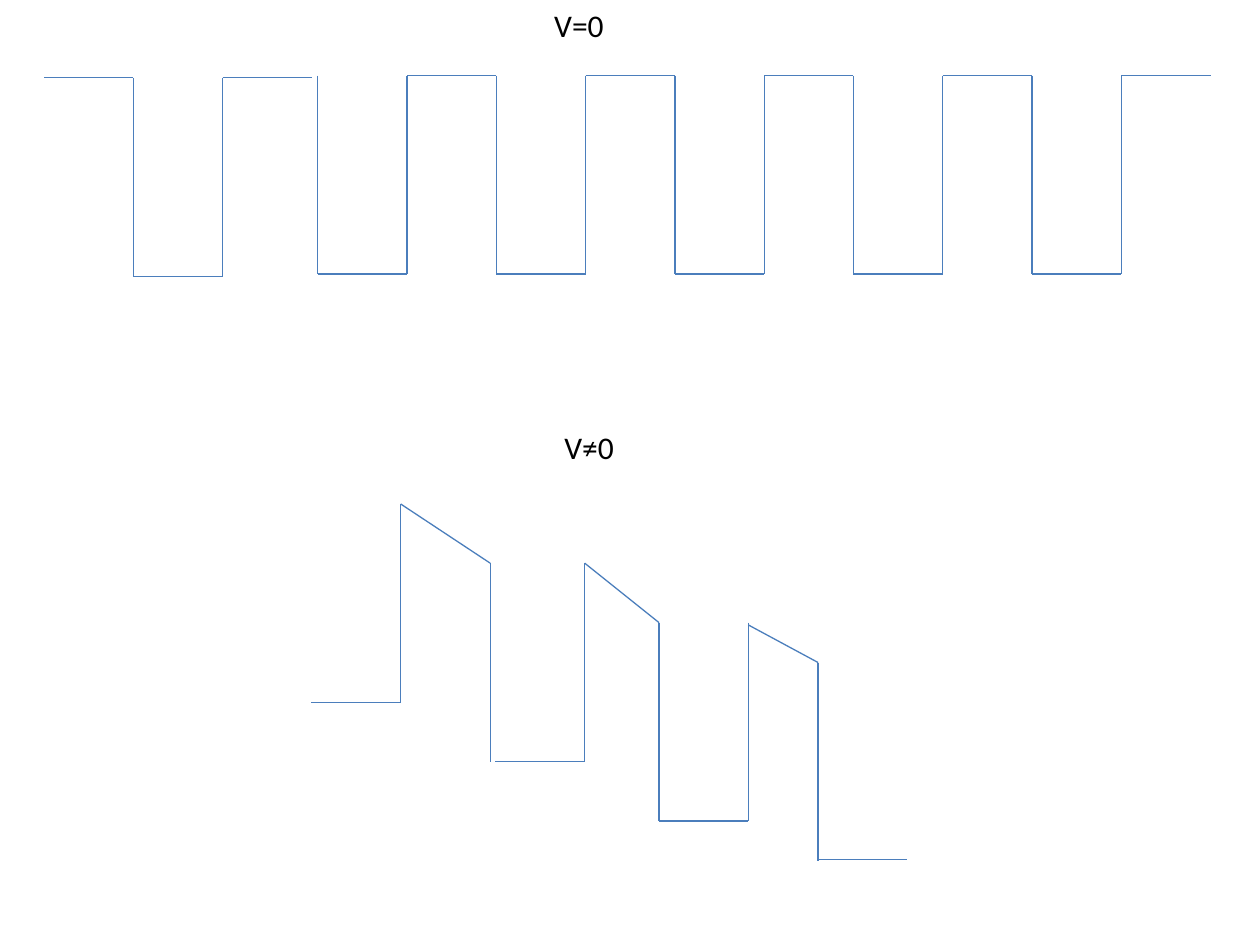
from pptx import Presentation
from pptx.dml.color import RGBColor
from pptx.enum.shapes import MSO_CONNECTOR
from pptx.oxml.ns import qn
from pptx.util import Pt
from lxml import etree

STRAIGHT = MSO_CONNECTOR.STRAIGHT
BLANK_LAYOUT = 6

THEME = {
    "line": RGBColor(0x4B, 0x7E, 0xBC),
    "line_width": Pt(0.75),
    "label": {"name": "Calibri", "size": Pt(18)},
    "label_color": RGBColor(0, 0, 0),
}

# Content, in points
LABELS = [("V=0", 309.6, 0), ("V≠0", 315.4, 241.2)]
LABEL_SIZE = (51, 29)
STEP = 51.02    # width of a well or a flat barrier
DEPTH = 113.4   # height of a wall

# Unbiased potential: (left of first well, top, number of wells)
WELL_TRAINS = [(76.25, 44.5, 1), (181.6, 43.2, 5)]
LEAD_BARRIER = (25.2, 44.5)

# Biased potential: floors (left, y), walls (x, top), ramps (start, end)
FLOORS = [(178, 401.4), (283, 435.2), (376.6, 469.2), (467.5, 491)]
WALLS = [(229, 288), (280.1, 321.8), (334.1, 321.8),
         (376.6, 355.8), (427.6, 355.8), (467.5, 378.6)]
RAMPS = [((229, 288), (280.1, 321.8)),
         ((334.1, 321.8), (376.6, 355.8)),
         ((427.6, 357.1), (467.5, 378.6))]


def add_line(page, start, end):
    line = page.shapes.add_connector(STRAIGHT, *map(Pt, (*start, *end)))
    line.line.color.rgb = THEME["line"]
    line.line.width = THEME["line_width"]
    etree.SubElement(line._element.spPr, qn("a:effectLst"))


def add_level(page, left, y):
    add_line(page, (left, y), (left + STEP, y))


def add_wall(page, x, top):
    add_line(page, (x, top), (x, top + DEPTH))


def add_well_train(page, left, top, count):
    for index in range(count):
        well = left + 2 * index * STEP
        add_wall(page, well, top)
        add_wall(page, well + STEP, top)
        add_level(page, well, top + DEPTH)
        add_level(page, well + STEP, top)


def add_label(page, text, left, top):
    box = page.shapes.add_textbox(*map(Pt, (left, top, *LABEL_SIZE)))
    box.text_frame.word_wrap = True
    span = box.text_frame.paragraphs[0].add_run()
    span.text = text
    for name, value in THEME["label"].items():
        setattr(span.font, name, value)
    span.font.color.rgb = THEME["label_color"]


def main():
    deck = Presentation()
    deck.slide_width, deck.slide_height = Pt(720), Pt(540)
    page = deck.slides.add_slide(deck.slide_layouts[BLANK_LAYOUT])

    # Periodic wells without bias
    add_level(page, *LEAD_BARRIER)
    for train in WELL_TRAINS:
        add_well_train(page, *train)

    # Captions of both diagrams
    for label in LABELS:
        add_label(page, *label)

    # Tilted barriers under bias
    for floor in FLOORS:
        add_level(page, *floor)
    for wall in WALLS:
        add_wall(page, *wall)
    for ramp in RAMPS:
        add_line(page, *ramp)

    deck.save("out.pptx")


if __name__ == "__main__":
    main()
